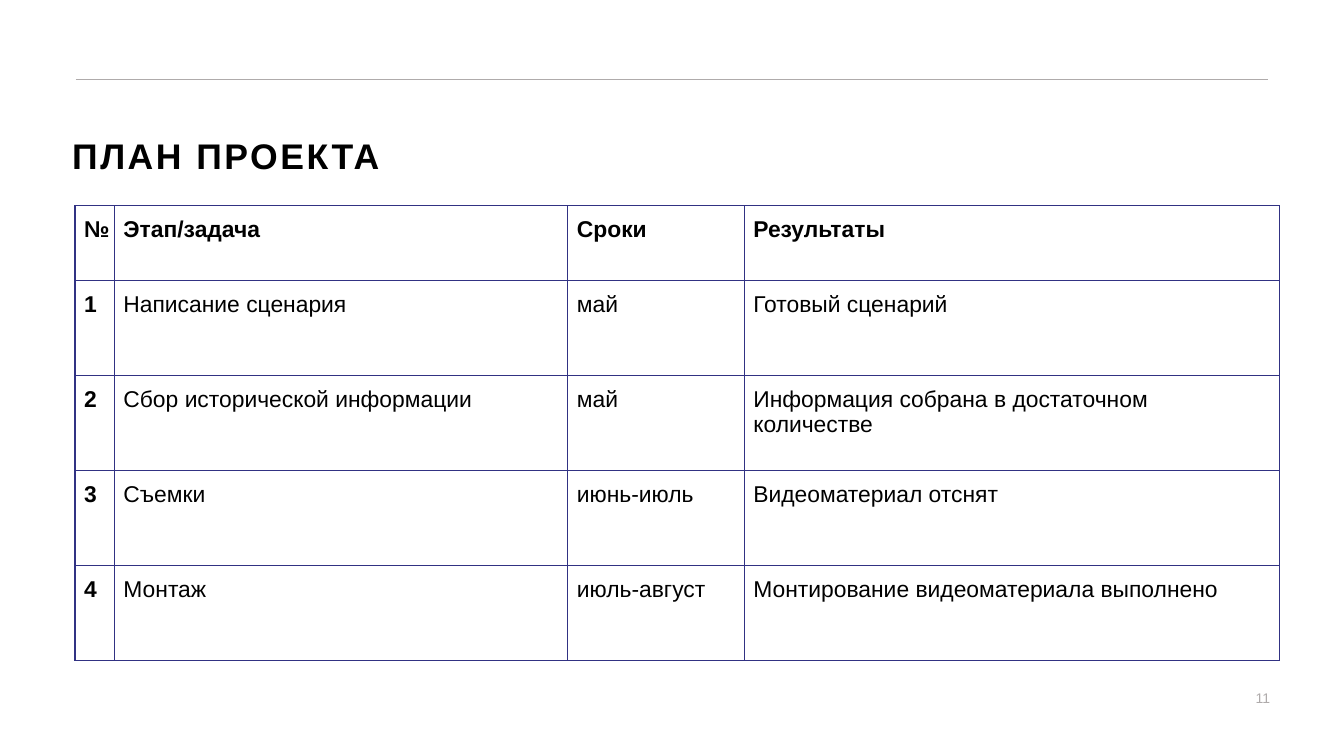
"""Build the project plan slide with its schedule table."""
from lxml import etree
from pptx import Presentation
from pptx.dml.color import RGBColor
from pptx.enum.shapes import MSO_CONNECTOR
from pptx.enum.text import MSO_ANCHOR, PP_ALIGN
from pptx.oxml import parse_xml
from pptx.oxml.ns import nsdecls, qn
from pptx.util import Pt

PX = 9144
BLACK = RGBColor(0x00, 0x00, 0x00)
GRAY = RGBColor(0xAF, 0xAB, 0xAB)
NAVY = RGBColor(0x31, 0x32, 0x83)
LEFT, CENTER, RIGHT = PP_ALIGN.LEFT, PP_ALIGN.CENTER, PP_ALIGN.RIGHT
MIDDLE, BOTTOM = MSO_ANCHOR.MIDDLE, MSO_ANCHOR.BOTTOM
STRAIGHT = MSO_CONNECTOR.STRAIGHT


def write(frame, text, size=18, color=BLACK, bold=False, align=LEFT, gap=0):
    para = frame.paragraphs[0]
    para.alignment = align
    run = para.add_run()
    run.text = text
    run.font.name = "Arial"
    run.font.size = Pt(size)
    run.font.bold = bold
    run.font.color.rgb = color
    if gap:
        run.font._element.set("spc", str(gap * 100))


def add_box(left, top, width, height, inset, anchor):
    box = slide.shapes.add_textbox(left * PX, top * PX, width * PX, height * PX)
    frame = box.text_frame
    frame.word_wrap = True
    frame.vertical_anchor = anchor
    frame.margin_left = frame.margin_right = inset * PX
    frame.margin_top = frame.margin_bottom = 0
    return frame


deck = Presentation()
deck.slide_width = 1470 * PX
deck.slide_height = 827 * PX
slide = deck.slides.add_slide(deck.slide_layouts[6])

rule = slide.shapes.add_connector(STRAIGHT, 83 * PX, 87 * PX, 1387 * PX, 87 * PX)
rule.line.color.rgb = GRAY
rule.line.width = Pt(0.5)
etree.SubElement(rule._element.spPr, qn("a:effectLst"))

number = add_box(1068, 751, 331, 25, 10, MIDDLE)
write(number, "11", size=11, color=GRAY, align=RIGHT)
title = add_box(79, 146, 968, 47, 0, BOTTOM)
write(title, "ПЛАН ПРОЕКТА", size=28, bold=True, gap=2)

PLAN = [
    ("№", "Этап/задача", "Сроки", "Результаты"),
    ("1", "Написание сценария", "май", "Готовый сценарий"),
    ("2", "Сбор исторической информации", "май",
     "Информация собрана в достаточном количестве"),
    ("3", "Съемки", "июнь-июль", "Видеоматериал отснят"),
    ("4", "Монтаж", "июль-август", "Монтирование видеоматериала выполнено"),
]
WIDTHS = (43, 496, 193, 585)
HEIGHTS = (82, 104, 104, 104, 104)

grid = slide.shapes.add_table(
    len(PLAN), len(WIDTHS), 82 * PX, 225 * PX, sum(WIDTHS) * PX, sum(HEIGHTS) * PX
).table
grid.horz_banding = False
for col, width in zip(grid.columns, WIDTHS):
    col.width = width * PX
for row, height in zip(grid.rows, HEIGHTS):
    row.height = height * PX

for r, line in enumerate(PLAN):
    for c, text in enumerate(line):
        cell = grid.cell(r, c)
        cell.margin_left = cell.margin_right = 10 * PX
        cell.margin_top = cell.margin_bottom = 12 * PX
        props = cell._tc.get_or_add_tcPr()
        for side in ("lnL", "lnR", "lnT", "lnB"):
            props.append(parse_xml(
                f'<a:{side} {nsdecls("a")} w="{Pt(1)}"><a:solidFill>'
                f'<a:srgbClr val="{NAVY}"/></a:solidFill></a:{side}>'
            ))
        cell.fill.background()
        align = CENTER if r == c == 0 else LEFT
        write(cell.text_frame, text, bold=r == 0 or c == 0, align=align)

deck.save("out.pptx")
